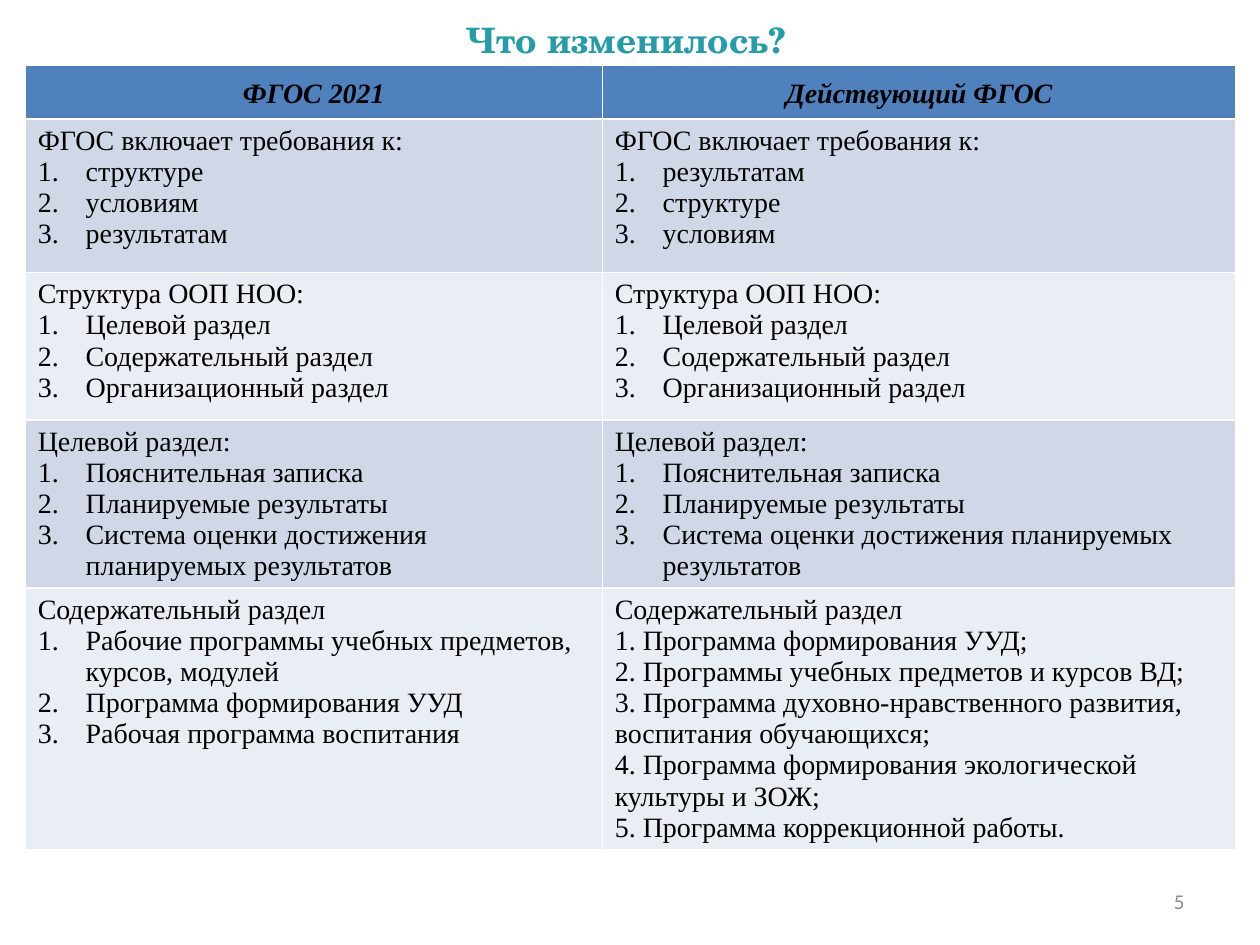
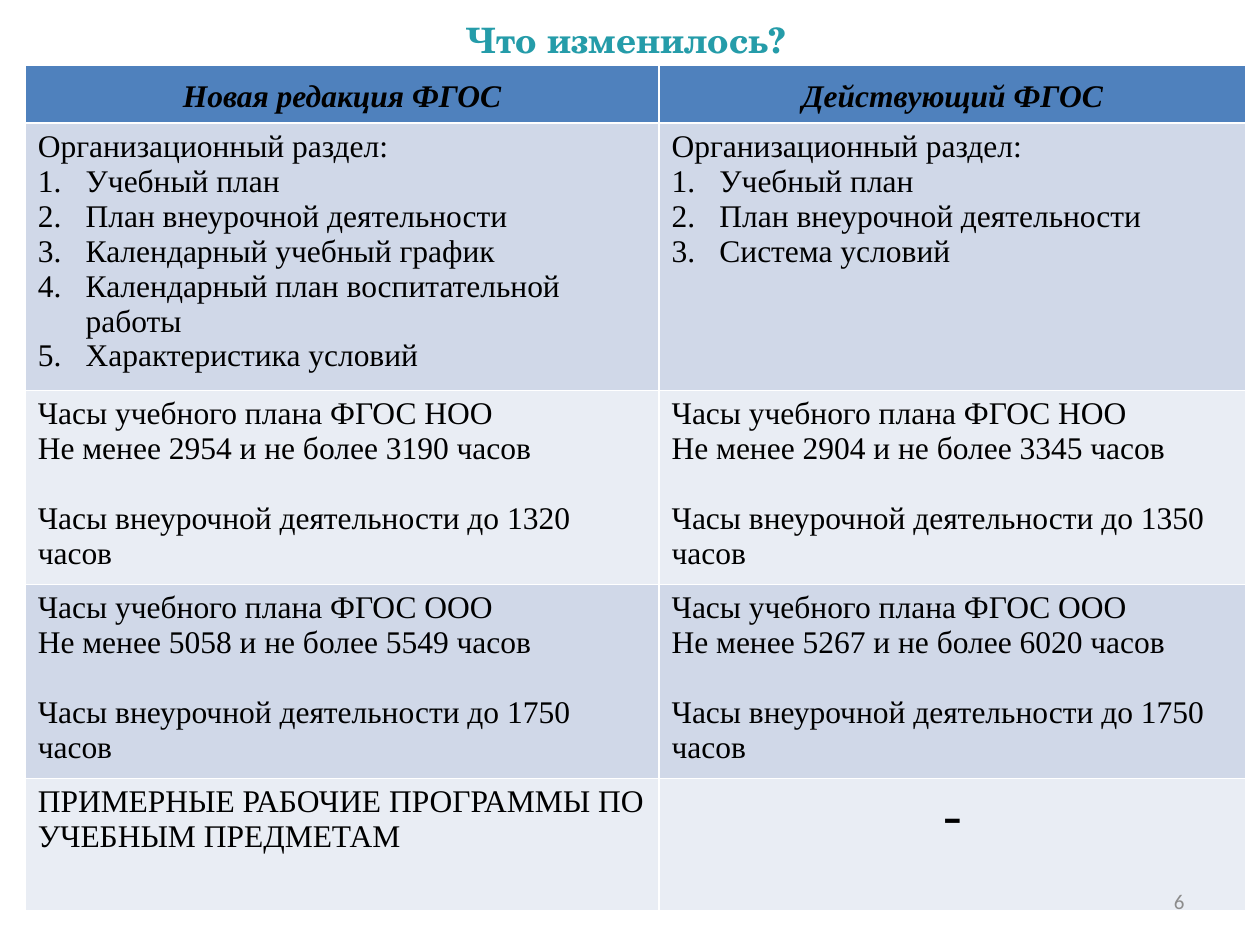
from pptx import Presentation
from pptx.dml.color import RGBColor
from pptx.enum import text as t
from pptx.oxml import parse_xml
from pptx.oxml.ns import nsdecls
from pptx.util import Inches, Pt

# Shared look
TEAL, BLUE, BLACK, GREY = "259CA9", "4F81BD", "000000", "8C8C8C"
BANDS = "D0D8E8", "E9EDF4"
SERIF, SCHOOL, SANS = "Times New Roman", "TeX Gyre Schola", "Calibri"
TITLE_BOX = 0.47, -0.31, 9, 1.25
PAGE_BOX = 7.17, 6.95, 2.33, 0.4
INDENT = Inches(0.38)


def color(value):
    return RGBColor.from_string(value)


def style(par, face, size, tint, bold=False, italic=False, align=t.PP_ALIGN.LEFT):
    font = par.font
    font.name, font.size, font.bold, font.italic = face, Pt(size), bold, italic
    font.color.rgb = color(tint)
    par.alignment = align


def number(par):
    props = par._p.get_or_add_pPr()
    props.set("marL", str(INDENT))
    props.set("indent", str(-INDENT))
    props.append(parse_xml(f'<a:buFont {nsdecls("a")} typeface="+mj-lt"/>'))
    props.append(parse_xml(f'<a:buAutoNum {nsdecls("a")} type="arabicPeriod"/>'))


# Cell contents: lists of (kind, text)
def plain(*lines):
    return [("plain", line) for line in lines]


def section(head, *items):
    return plain(head) + [("number", item) for item in items]


def hours(level, low, high, extra):
    return plain(f"Часы учебного плана ФГОС {level}",
                 f"Не менее {low} и не более {high} часов") + [
        ("gap", f"Часы внеурочной деятельности до {extra} часов")]


def add_title(slide, box):
    title = slide.shapes.title
    title.left, title.top, title.width, title.height = map(Inches, box)
    frame = title.text_frame
    frame.text = "Что изменилось?"
    frame.vertical_anchor = t.MSO_ANCHOR.MIDDLE
    style(frame.paragraphs[0], SCHOOL, 20, TEAL, bold=True, align=t.PP_ALIGN.CENTER)


def add_page(slide, box, page):
    frame = slide.shapes.add_textbox(*map(Inches, box)).text_frame
    frame.word_wrap = True
    frame.vertical_anchor = t.MSO_ANCHOR.MIDDLE
    frame.text = str(page)
    style(frame.paragraphs[0], SANS, 12, GREY, align=t.PP_ALIGN.RIGHT)


def fill_head(cell, label, size):
    cell.fill.solid()
    cell.fill.fore_color.rgb = color(BLUE)
    cell.margin_left = cell.margin_right = Inches(0.07)
    cell.margin_top = cell.margin_bottom = Inches(0.07)
    cell.text = label
    par = cell.text_frame.paragraphs[0]
    style(par, SERIF, size, BLACK, True, True, t.PP_ALIGN.CENTER)
    par.line_spacing = 1.15


def fill_cell(cell, lines, size, band):
    cell.fill.solid()
    cell.fill.fore_color.rgb = color(band)
    frame = cell.text_frame
    for i, (kind, line) in enumerate(lines):
        par = frame.add_paragraph() if i else frame.paragraphs[0]
        par.text = line
        if kind == "dash":
            style(par, SERIF, 32, BLACK, align=t.PP_ALIGN.CENTER)
            continue
        style(par, SERIF, size, BLACK)
        if kind == "number":
            number(par)
        elif kind == "gap":
            par.space_before = Pt(20)


def add_grid(slide, left, top, cols, rows, size, heads, body):
    box = map(Inches, (left, top, sum(cols), sum(rows)))
    table = slide.shapes.add_table(len(rows), len(cols), *box).table
    for col, width in zip(table.columns, cols):
        col.width = Inches(width)
    for row, height in zip(table.rows, rows):
        row.height = Inches(height)
    for c, label in enumerate(heads):
        fill_head(table.cell(0, c), label, size)
    for r, pair in enumerate(body):
        for c, lines in enumerate(pair):
            fill_cell(table.cell(r + 1, c), lines, size, BANDS[r % 2])


def add_slide(deck, page, **grid):
    slide = deck.slides.add_slide(deck.slide_layouts[5])
    add_title(slide, TITLE_BOX)
    add_grid(slide, 0.2, 0.52, **grid)
    add_page(slide, PAGE_BOX, page)


def main():
    deck = Presentation()
    deck.slide_width, deck.slide_height = Inches(10), Inches(7.5)

    # Requirements and programme sections
    need = "ФГОС включает требования к:"
    parts = section("Структура ООП НОО:", "Целевой раздел",
                    "Содержательный раздел", "Организационный раздел")
    goals = section("Целевой раздел:", "Пояснительная записка",
                    "Планируемые результаты",
                    "Система оценки достижения планируемых результатов")
    content = "Содержательный раздел"
    add_slide(
        deck, 5, cols=(4.58, 5.03), rows=(0.42, 1.22, 1.17, 1.33, 2.08), size=16,
        heads=("ФГОС 2021", "Действующий ФГОС"),
        body=[
            (section(need, "структуре", "условиям", "результатам"),
             section(need, "результатам", "структуре", "условиям")),
            (parts, parts),
            (goals, goals),
            (section(content,
                     "Рабочие программы учебных предметов, курсов, модулей",
                     "Программа формирования УУД",
                     "Рабочая программа воспитания"),
             plain(content,
                   "1. Программа формирования УУД;",
                   "2. Программы учебных предметов и курсов ВД;",
                   "3. Программа духовно-нравственного развития, воспитания обучающихся;",
                   "4. Программа формирования экологической культуры и ЗОЖ;",
                   "5. Программа коррекционной работы.")),
        ])

    # Organisation and hours
    setup = "Организационный раздел:", "Учебный план", "План внеурочной деятельности"
    add_slide(
        deck, 6, cols=(5.03, 4.66), rows=(0.44, 2.12, 1.54, 1.54, 1.05), size=18,
        heads=("Новая редакция ФГОС", "Действующий ФГОС"),
        body=[
            (section(*setup, "Календарный учебный график",
                     "Календарный план воспитательной работы",
                     "Характеристика условий"),
             section(*setup, "Система условий")),
            (hours("НОО", 2954, 3190, 1320), hours("НОО", 2904, 3345, 1350)),
            (hours("ООО", 5058, 5549, 1750), hours("ООО", 5267, 6020, 1750)),
            (plain("ПРИМЕРНЫЕ РАБОЧИЕ ПРОГРАММЫ ПО УЧЕБНЫМ ПРЕДМЕТАМ"),
             [("dash", "-")]),
        ])
    deck.save("out.pptx")


if __name__ == "__main__":
    main()
